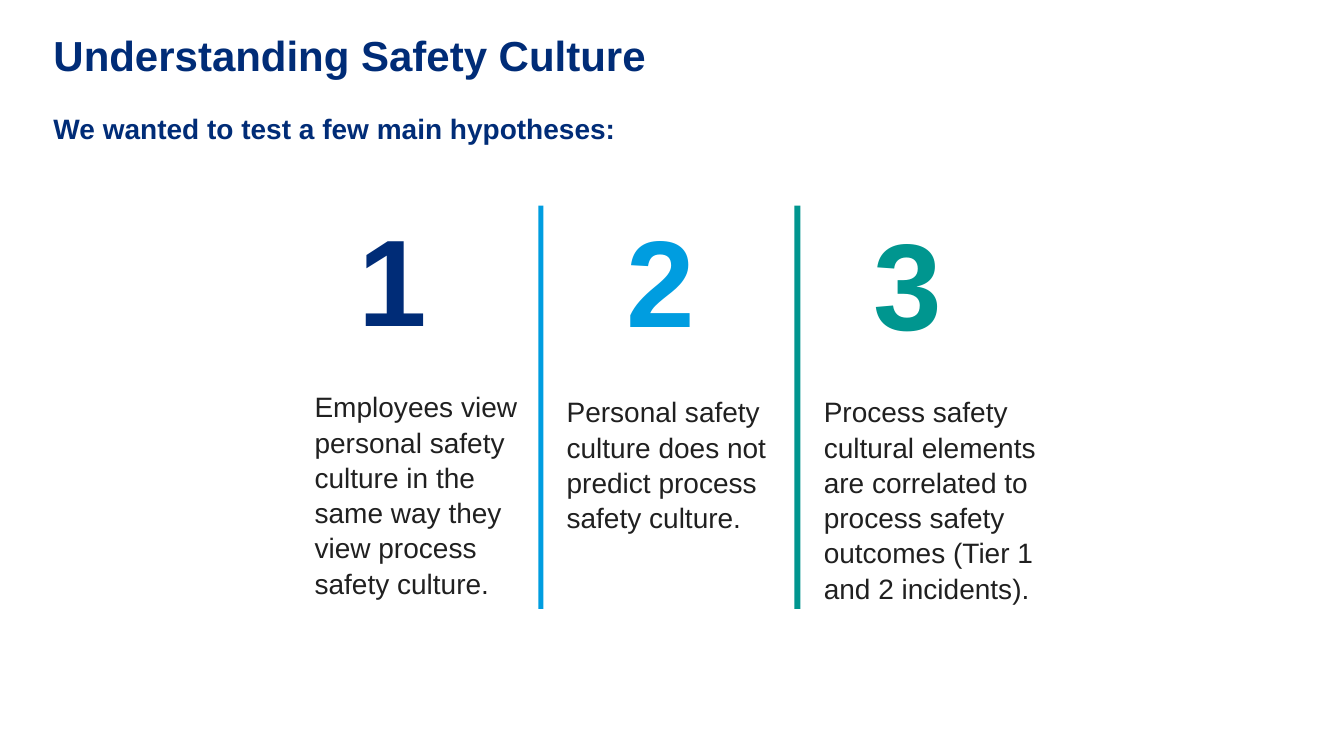
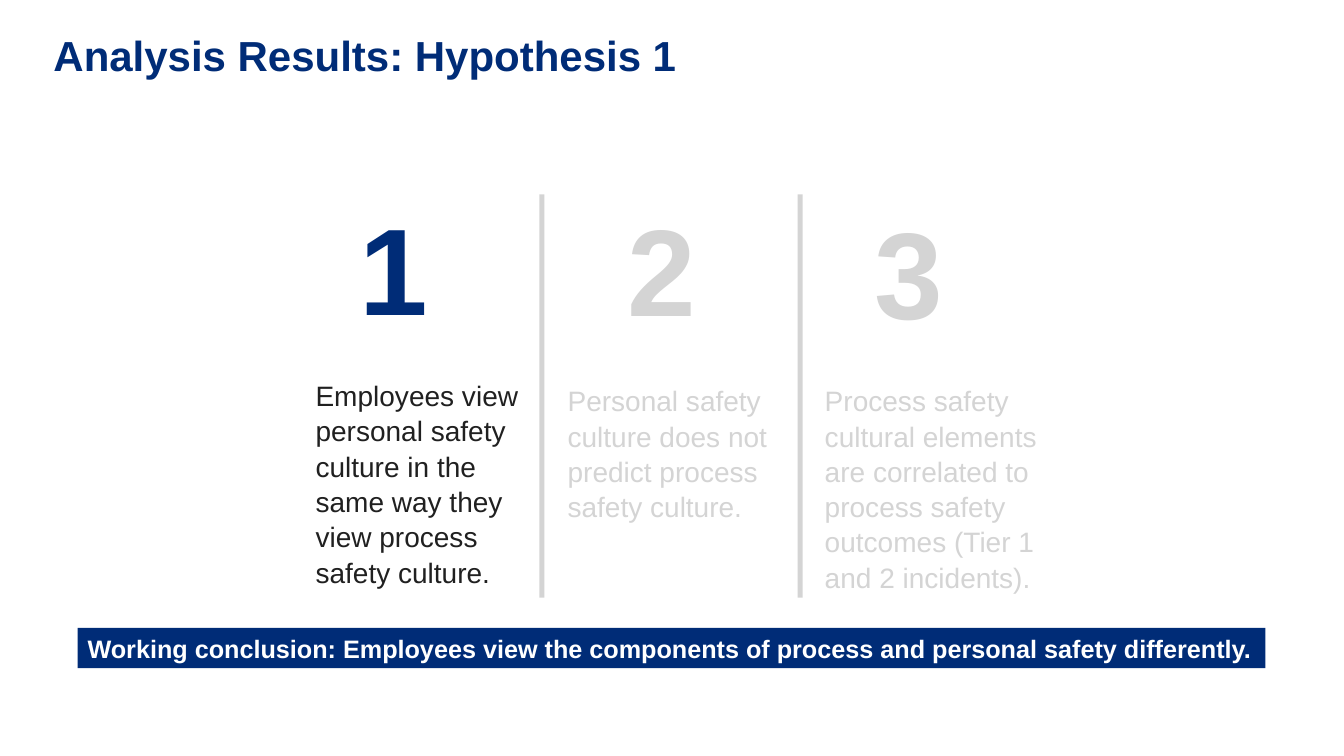
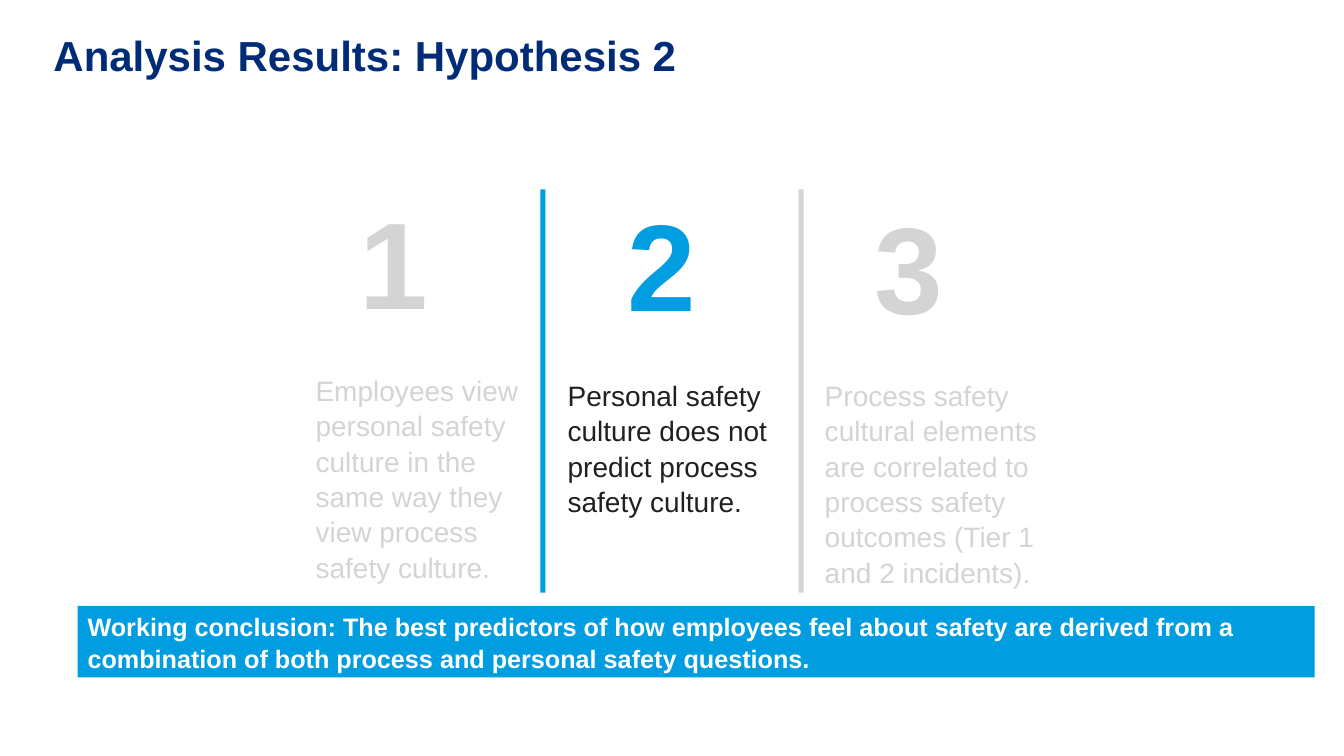
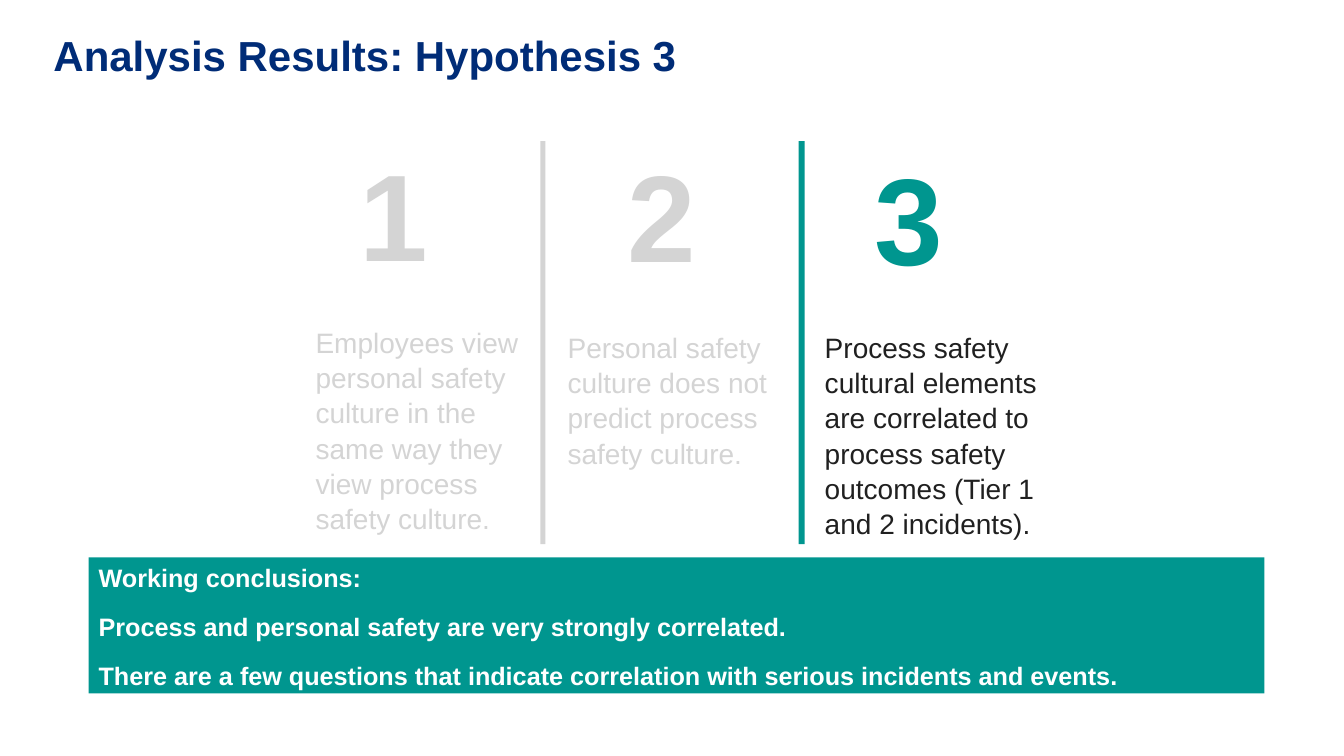
from pptx import Presentation
from pptx.dml.color import RGBColor
from pptx.enum.shapes import MSO_SHAPE
from pptx.enum.text import MSO_ANCHOR, MSO_AUTO_SIZE, PP_ALIGN
from pptx.util import Pt

PX = 9144
FONT = "Arial"
NAVY = RGBColor(0x00, 0x2C, 0x77)
BLUE = RGBColor(0x00, 0x9D, 0xE0)
TEAL = RGBColor(0x00, 0x96, 0x8F)
GREY = RGBColor(0xD4, 0xD4, 0xD4)
INK = RGBColor(0x20, 0x20, 0x20)
WHITE = RGBColor(0xFF, 0xFF, 0xFF)
RECT = MSO_SHAPE.RECTANGLE
TOP = MSO_ANCHOR.TOP
MIDDLE = MSO_ANCHOR.MIDDLE
LEFT = PP_ALIGN.LEFT
FIXED = MSO_AUTO_SIZE.NONE
TITLE_ONLY = 5

COLUMNS = [
    (NAVY, 356, 10, 285, 154, 267,
     "Employees view personal safety culture in the same way they view process safety culture."),
    (BLUE, 621, 9, 535, 159, 270,
     "Personal safety culture does not predict process safety culture."),
    (TEAL, 866, 6, 790, 159, 271,
     "Process safety cultural elements are correlated to process safety outcomes "
     "(Tier 1 and 2 incidents)."),
]

RESULTS = [
    (193, (535, 791), (77, 623, 1178, 40), [
        "Working conclusion: Employees view the components of process and personal "
        "safety differently."]),
    (188, (536, 792), (77, 601, 1227, 71), [
        "Working conclusion: The best predictors of how employees feel about safety are "
        "derived from a combination of both process and personal safety questions."]),
    (140, (536, 792), (88, 553, 1166, 135), [
        "Working conclusions:",
        "Process and personal safety are very strongly correlated.",
        "There are a few questions that indicate correlation with serious incidents and events."]),
]


class Deck:
    """Holds the style and the current slide."""

    def __init__(self):
        """Start an empty wide deck."""
        self.show = Presentation()
        self.show.slide_width = 1333 * PX
        self.show.slide_height = 750 * PX
        self.slide = None

    def put(self, frame, lines, color, bold=False, space=1.05, gap=0, inset=None):
        """Fill a frame with (text, size) lines, gap px apart."""
        frame.auto_size = FIXED
        if inset is not None:
            frame.margin_left = frame.margin_right = inset * PX
            frame.margin_top = frame.margin_bottom = inset * PX
        for i, (text, size) in enumerate(lines):
            para = frame.add_paragraph() if i else frame.paragraphs[0]
            para.alignment = LEFT
            para.line_spacing = space
            if i:
                para.space_before = gap * PX
            run = para.add_run()
            run.text = text
            font = run.font
            font.name, font.size, font.bold = FONT, Pt(size), bold
            font.color.rgb = color

    def page(self, title, lead=None):
        """Add a slide with its title and an optional lead line."""
        self.slide = self.show.slides.add_slide(self.show.slide_layouts[TITLE_ONLY])
        head = self.slide.shapes.title
        head.left, head.top, head.width, head.height = (n * PX for n in (53, 39, 1227, 54))
        frame = head.text_frame
        frame.vertical_anchor = TOP
        lines = [(title, 30)] + ([(lead, 20)] if lead else [])
        self.put(frame, lines, NAVY, True, space=0.8, gap=38, inset=0)

    def text(self, x, y, w, h, words, size, color, bold=False, wrap=True, inset=0):
        """Add a text box."""
        frame = self.slide.shapes.add_textbox(x * PX, y * PX, w * PX, h * PX).text_frame
        frame.word_wrap = wrap
        frame.vertical_anchor = TOP
        self.put(frame, [(words, size)], color, bold, inset=inset)

    def block(self, x, y, w, h, color):
        """Add a plain filled rectangle."""
        shape = self.slide.shapes.add_shape(RECT, x * PX, y * PX, w * PX, h * PX)
        shape.shadow.inherit = False
        shape.fill.solid()
        shape.fill.fore_color.rgb = color
        shape.line.fill.background()
        return shape

    def columns(self, top, shift, bars, focus=None):
        """Add the three hypotheses, greying all but the one in focus."""
        for num, (tint, num_x, rise, x, drop, w, words) in enumerate(COLUMNS, 1):
            lit = focus in (None, num)
            color = tint if lit else GREY
            self.text(x + shift, top + drop, w, 278, words, 20,
                      INK if lit else GREY, inset=27)
            self.text(num_x + shift, top - rise, 69, 148, str(num), 88,
                      color, bold=True, wrap=False)
            if num > 1:
                wide = 6 if color == TEAL else 5
                self.block(bars[num - 2], top, wide, 400, color)

    def banner(self, x, y, w, h, color, lines):
        """Add the conclusion band."""
        frame = self.block(x, y, w, h, color).text_frame
        frame.word_wrap = True
        frame.vertical_anchor = MIDDLE
        self.put(frame, [(line, 18) for line in lines], WHITE, True, gap=17)


def main():
    """Build and save the deck."""
    deck = Deck()
    deck.page("Understanding Safety Culture", "We wanted to test a few main hypotheses:")
    deck.columns(204, 0, (534, 788))
    for num, (top, bars, box, lines) in enumerate(RESULTS, 1):
        deck.page(f"Analysis Results: Hypothesis {num}")
        deck.columns(top, 1, bars, num)
        deck.banner(*box, COLUMNS[num - 1][0], lines)
    deck.show.save("out.pptx")


if __name__ == "__main__":
    main()
